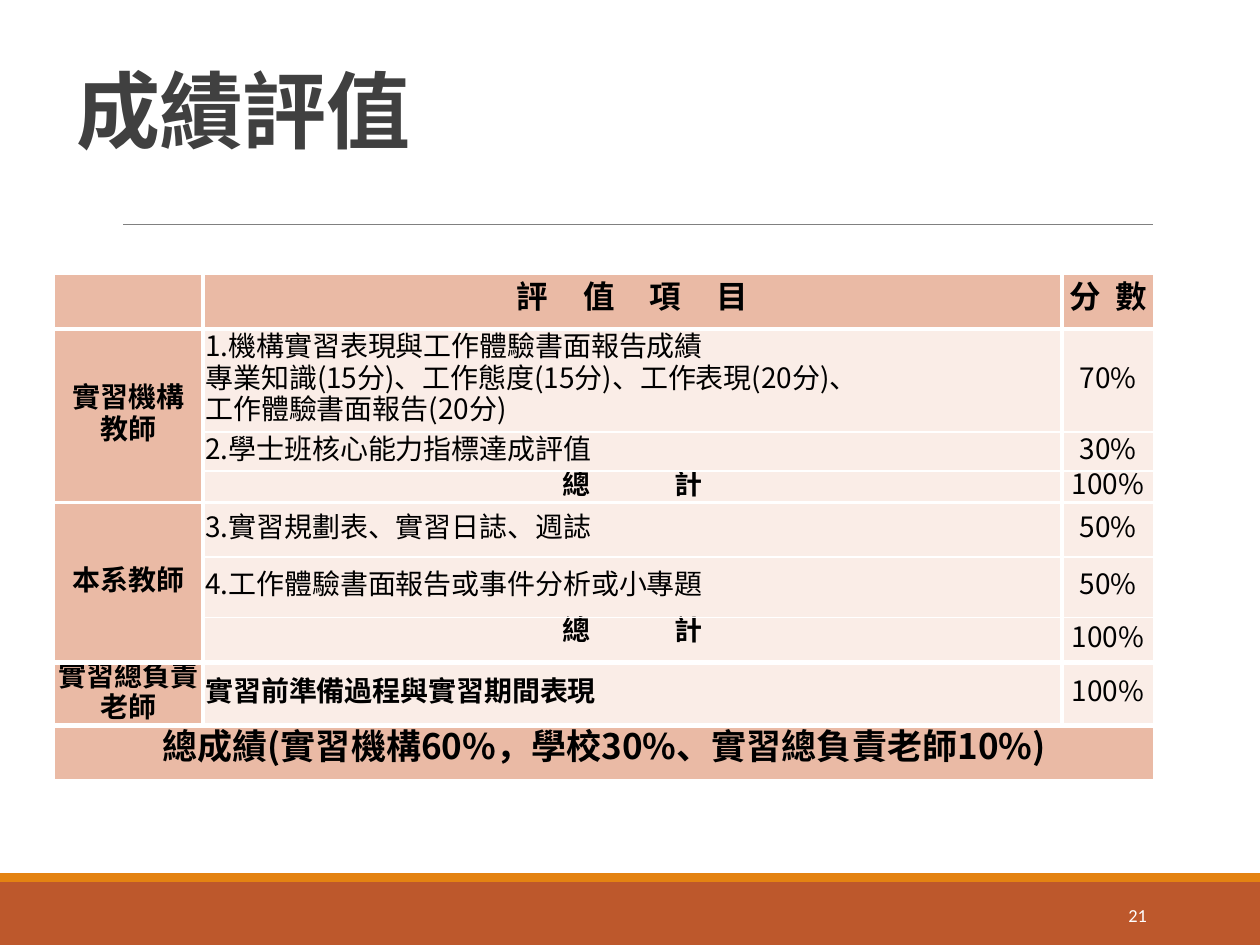
"""Builds the grading slide: a title, a merged score table and a footer band."""
from dataclasses import dataclass

from lxml import etree
from pptx import Presentation
from pptx.dml.color import RGBColor
from pptx.enum.shapes import MSO_CONNECTOR, MSO_SHAPE
from pptx.enum.text import MSO_ANCHOR, MSO_AUTO_SIZE, PP_ALIGN
from pptx.oxml.ns import qn
from pptx.util import Inches, Pt

RECTANGLE = MSO_SHAPE.RECTANGLE
STRAIGHT = MSO_CONNECTOR.STRAIGHT
TOP, MIDDLE, BOTTOM = MSO_ANCHOR.TOP, MSO_ANCHOR.MIDDLE, MSO_ANCHOR.BOTTOM
LEFT, CENTER = PP_ALIGN.LEFT, PP_ALIGN.CENTER
RIGHT, JUSTIFY = PP_ALIGN.RIGHT, PP_ALIGN.JUSTIFY
NO_AUTOFIT = MSO_AUTO_SIZE.NONE

SLIDE_WIDTH, SLIDE_HEIGHT = Inches(10), Inches(7.5)
COLUMN_WIDTHS = (1.18, 6.82, 0.73)
ROW_HEIGHTS = (0.43, 0.82, 0.31, 0.21, 0.43, 0.48, 0.36, 0.36, 0.44)
COLUMN_RULES = (1, 2.25, 2.25, 1)
ROW_RULES = (1, 2.25, 1, 1, 2.25, 1, 1, 3, 3, 3)


@dataclass(frozen=True)
class Theme:
    """Colours, fonts and type sizes of the slide."""
    band: str = "BD582C"
    accent: str = "E48312"
    rule: str = "808080"
    title: str = "404040"
    ink: str = "000000"
    white: str = "FFFFFF"
    label_fill: str = "EABAA5"
    item_fill: str = "FAEDE7"
    font: str = "Noto Sans CJK SC"
    number_font: str = "Calibri"
    title_size: float = 48
    total_size: float = 20
    header_size: float = 18
    body_size: float = 16
    number_size: float = 10.5
    leading: float = 18


THEME = Theme()


@dataclass(frozen=True)
class Entry:
    """One table entry; tracking widens every character but the last."""
    row: int
    column: int
    lines: tuple = ()
    rows: int = 1
    columns: int = 1
    label: bool = False
    bold: bool = False
    size: float = THEME.body_size
    align: PP_ALIGN = CENTER
    anchor: MSO_ANCHOR = MIDDLE
    hang: float = 0
    tracking: float = 0


def label(row, column, *lines, **options):
    """Describe a bold entry on the darker fill."""
    return Entry(row, column, lines, label=True, bold=True, **options)


def item(row, *lines, **options):
    """Describe an entry of the middle column."""
    return Entry(row, 1, lines, **options)


def subtotal(row, **options):
    """Describe a subtotal line."""
    return item(row, "總 計", bold=True, tracking=22, **options)


ENTRIES = [
    label(0, 0),
    label(0, 1, "評 值 項 目", size=THEME.header_size, tracking=8),
    label(0, 2, "分 數", size=THEME.header_size, tracking=2),
    label(1, 0, "實習機構", "教師", rows=3),
    item(1, "1.機構實習表現與工作體驗書面報告成績",
         "專業知識(15分)、工作態度(15分)、工作表現(20分)、",
         "工作體驗書面報告(20分)", align=JUSTIFY),
    item(2, "2.學士班核心能力指標達成評值", align=LEFT, hang=0.15),
    subtotal(3, hang=0.15),
    label(4, 0, "本系教師", rows=3),
    item(4, "3.實習規劃表、實習日誌、週誌", align=JUSTIFY, hang=0.17),
    item(5, "4.工作體驗書面報告或事件分析或小專題", align=JUSTIFY),
    subtotal(6, anchor=TOP),
    label(7, 0, "實習總負責老師"),
    item(7, "實習前準備過程與實習期間表現", bold=True, align=LEFT),
    label(8, 0, "總成績(實習機構60%，學校30%、實習總負責老師10%)",
          columns=3, size=THEME.total_size),
] + [Entry(row, 2, (score,)) for row, score in enumerate(
    ("70%", "30%", "100%", "50%", "50%", "100%", "100%"), start=1)]


def set_fill(fill, color):
    """Apply a solid fill."""
    fill.solid()
    fill.fore_color.rgb = RGBColor.from_string(color)


def add_run(paragraph, text, size, color, font=THEME.font, bold=False, tracking=0):
    """Append one formatted run, with tracking in points."""
    run = paragraph.add_run()
    run.text = text
    run.font.size, run.font.bold, run.font.name = Pt(size), bold, font
    run.font.color.rgb = RGBColor.from_string(color)
    properties = run.font._element
    etree.SubElement(properties, qn("a:ea")).set("typeface", font)
    if tracking:
        properties.set("spc", str(round(tracking * 100)))


def add_band(slide, top, height, color):
    """Draw a full-width footer band."""
    shape = slide.shapes.add_shape(RECTANGLE, 0, Inches(top), SLIDE_WIDTH, Inches(height))
    shape.shadow.inherit = False
    set_fill(shape.fill, color)
    shape.line.fill.background()


def add_rule(slide, left, right, top):
    """Draw the thin rule under the title."""
    connector = slide.shapes.add_connector(
        STRAIGHT, Inches(left), Inches(top), Inches(right), Inches(top))
    connector.line.color.rgb = RGBColor.from_string(THEME.rule)
    connector.line.width = Pt(0.5)
    etree.SubElement(connector._element.spPr, qn("a:effectLst"))


def set_title(slide, text):
    """Place and format the title placeholder."""
    shape = slide.shapes.title
    shape.left, shape.top = Inches(0.51), Inches(0.36)
    shape.width, shape.height = Inches(3.17), Inches(0.96)
    frame = shape.text_frame
    frame.auto_size, frame.vertical_anchor = NO_AUTOFIT, BOTTOM
    paragraph = frame.paragraphs[0]
    paragraph.alignment, paragraph.line_spacing = LEFT, 0.85
    add_run(paragraph, text, THEME.title_size, THEME.title, bold=True, tracking=-0.5)


def add_slide_number(slide, text):
    """Write the slide number on the footer band."""
    shape = slide.shapes.add_textbox(Inches(8.12), Inches(7.06), Inches(1.08), Inches(0.4))
    frame = shape.text_frame
    frame.word_wrap, frame.vertical_anchor = True, MIDDLE
    frame.paragraphs[0].alignment = RIGHT
    add_run(frame.paragraphs[0], text, THEME.number_size, THEME.white, THEME.number_font)


def set_borders(cell, entry):
    """Give a cell the white rules that meet its edges."""
    properties = cell._tc.get_or_add_tcPr()
    widths = {"a:lnL": COLUMN_RULES[entry.column],
              "a:lnR": COLUMN_RULES[entry.column + entry.columns],
              "a:lnT": ROW_RULES[entry.row],
              "a:lnB": ROW_RULES[entry.row + entry.rows]}
    for position, (tag, width) in enumerate(widths.items()):
        line = etree.Element(qn(tag), w=str(Pt(width)))
        fill = etree.SubElement(line, qn("a:solidFill"))
        etree.SubElement(fill, qn("a:srgbClr"), val=THEME.white)
        properties.insert(position, line)


def fill_cell(table, entry):
    """Merge, colour and write one table entry."""
    cell = table.cell(entry.row, entry.column)
    if entry.rows * entry.columns > 1:
        cell.merge(table.cell(entry.row + entry.rows - 1, entry.column + entry.columns - 1))
    set_fill(cell.fill, THEME.label_fill if entry.label else THEME.item_fill)
    set_borders(cell, entry)
    cell.vertical_anchor = entry.anchor
    cell.margin_left = cell.margin_right = Inches(0.02)
    cell.margin_top = cell.margin_bottom = 0
    for index, line in enumerate(entry.lines):
        frame = cell.text_frame
        paragraph = frame.add_paragraph() if index else frame.paragraphs[0]
        paragraph.alignment, paragraph.line_spacing = entry.align, Pt(THEME.leading)
        if entry.hang:
            properties = paragraph._p.get_or_add_pPr()
            properties.set("marL", str(Inches(entry.hang)))
            properties.set("indent", str(-Inches(entry.hang)))
        parts = ((line[:-1], entry.tracking), (line[-1], 0)) if entry.tracking else ((line, 0),)
        for text, tracking in parts:
            add_run(paragraph, text, entry.size, THEME.ink, bold=entry.bold, tracking=tracking)


def add_score_table(slide):
    """Build the score table from its entries."""
    table = slide.shapes.add_table(
        len(ROW_HEIGHTS), len(COLUMN_WIDTHS), Inches(0.43), Inches(2.18),
        Inches(sum(COLUMN_WIDTHS)), Inches(sum(ROW_HEIGHTS))).table
    for column, width in zip(table.columns, COLUMN_WIDTHS):
        column.width = Inches(width)
    for row, height in zip(table.rows, ROW_HEIGHTS):
        row.height = Inches(height)
    for entry in ENTRIES:
        fill_cell(table, entry)


def main():
    """Assemble and save the slide."""
    presentation = Presentation()
    presentation.slide_width, presentation.slide_height = SLIDE_WIDTH, SLIDE_HEIGHT
    slide = presentation.slides.add_slide(presentation.slide_layouts[5])
    add_band(slide, 7, 0.5, THEME.band)
    add_band(slide, 6.93, 0.07, THEME.accent)
    add_rule(slide, 0.98, 9.15, 1.78)
    set_title(slide, "成績評值")
    add_slide_number(slide, "21")
    add_score_table(slide)
    presentation.save("out.pptx")


if __name__ == "__main__":
    main()
